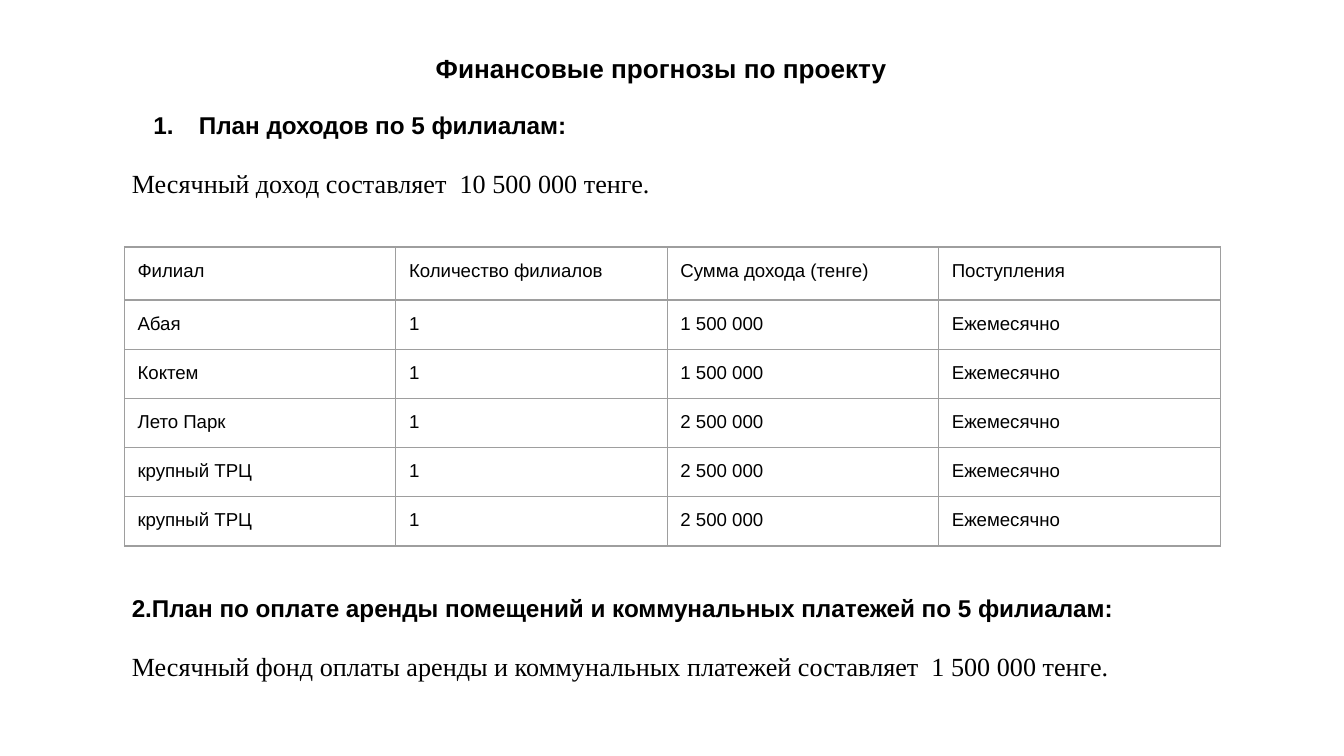
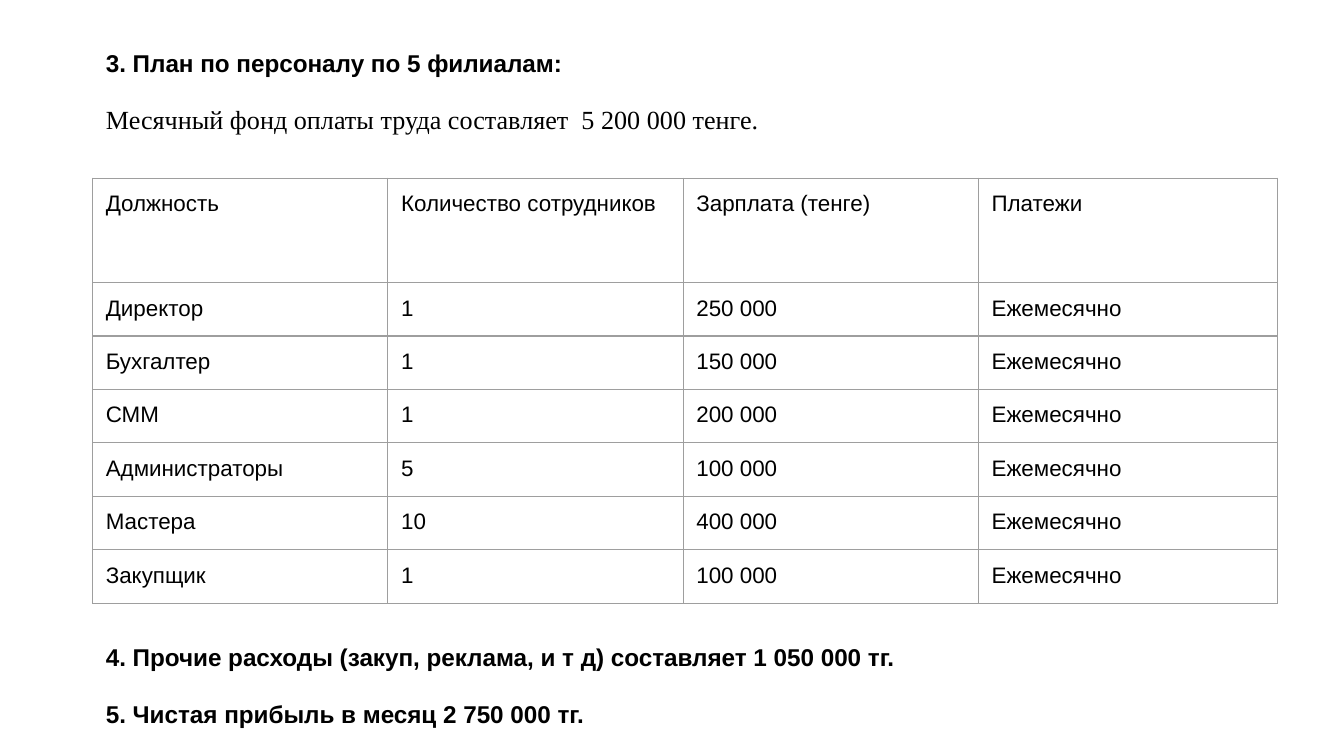
from pptx import Presentation
from pptx.dml.color import RGBColor
from pptx.enum.text import MSO_ANCHOR, MSO_AUTO_SIZE, PP_ALIGN
from pptx.oxml.ns import qn
from pptx.util import Cm, Pt
from lxml.etree import SubElement

# Shared look
BLACK, WHITE, GRID = "000000", "FFFFFF", "9E9E9E"
INSET = Cm(0.25)
PARAGRAPH_GAP = Pt(15)
TWO_CONTENT_LAYOUT = 3
# style: font, size, bold, alignment
STYLES = {
    "title": ("Arial", 14, True, PP_ALIGN.CENTER),
    "heading": ("Arial", 13, True, PP_ALIGN.LEFT),
    "numbered": ("Arial", 13, True, PP_ALIGN.LEFT),
    "statement": ("Times New Roman", 14, False, PP_ALIGN.JUSTIFY),
}

# Content: texts as (style, wording); places in cm as left, top, width, height
MONTHLY = "Ежемесячно"
PAGES = [
    {
        "texts": [
            ((2.24, 0.74, 20.52, 1.09), [("title", "Финансовые прогнозы по проекту")]),
            ((2.24, 1.83, 20.52, 2.84), [
                ("numbered", "План доходов по 5 филиалам:"),
                ("statement", "Месячный доход составляет  10 500 000 тенге."),
            ]),
            ((2.24, 10.97, 20.83, 2.24), [
                ("heading", "2.План по оплате аренды помещений и коммунальных платежей по 5 филиалам:"),
                ("statement", "Месячный фонд оплаты аренды и коммунальных платежей составляет  1 500 000 тенге."),
            ]),
        ],
        "table": {
            "corner": (2.35, 4.67), "columns": [5.13] * 3 + [5.33],
            "header_height": 1, "row_height": 0.93, "size": 10,
            "header": ("Филиал", "Количество филиалов", "Сумма дохода (тенге)", "Поступления"),
            "rows": [
                ("Абая", "1", "1 500 000"),
                ("Коктем", "1", "1 500 000"),
                ("Лето Парк", "1", "2 500 000"),
                ("крупный ТРЦ", "1", "2 500 000"),
                ("крупный ТРЦ", "1", "2 500 000"),
            ],
        },
    },
    {
        "texts": [
            ((1.75, 0.66, 21.51, 1.04), [("heading", "3. План по персоналу по 5 филиалам:")]),
            ((1.75, 1.7, 21.51, 1.2), [
                ("statement", "Месячный фонд оплаты труда составляет  5 200 000 тенге."),
            ]),
            ((1.75, 11.89, 22.38, 2.18), [
                ("heading", "4. Прочие расходы (закуп, реклама, и т д) составляет 1 050 000 тг."),
                ("heading", "5. Чистая прибыль в месяц 2 750 000 тг."),
            ]),
        ],
        "table": {
            "corner": (1.75, 3.37), "columns": [5.58] * 3 + [5.66],
            "header_height": 1.97, "row_height": 1.01, "size": 12,
            "header": ("Должность", "Количество сотрудников", "Зарплата (тенге)", "Платежи"),
            "rows": [
                ("Директор", "1", "250 000"),
                ("Бухгалтер", "1", "150 000"),
                ("СММ", "1", "200 000"),
                ("Администраторы", "5", "100 000"),
                ("Мастера", "10", "400 000"),
                ("Закупщик", "1", "100 000"),
            ],
        },
    },
]


def color(value):
    return RGBColor.from_string(value)


def format_font(paragraph, name, size, bold=False):
    for span in paragraph.runs:
        span.font.name = name
        span.font.size = Pt(size)
        span.font.bold = bold
        span.font.color.rgb = color(BLACK)


def set_margins(target):
    target.margin_left = target.margin_right = INSET
    target.margin_top = target.margin_bottom = INSET


def set_bullet(paragraph, numbered):
    properties = paragraph._p.get_or_add_pPr()
    properties.set("marL", str(Cm(1.27) if numbered else 0))
    properties.set("indent", str(Cm(-0.86) if numbered else 0))
    if numbered:
        SubElement(properties, qn("a:buFont"), typeface="Arial")
        SubElement(properties, qn("a:buAutoNum"), type="arabicPeriod")
    else:
        SubElement(properties, qn("a:buNone"))


def fill_placeholder(box, place, lines):
    box.left, box.top, box.width, box.height = map(Cm, place)
    frame = box.text_frame
    frame.text = "\n".join(wording for _, wording in lines)
    frame.word_wrap = True
    frame.auto_size = MSO_AUTO_SIZE.NONE
    frame.vertical_anchor = MSO_ANCHOR.TOP
    set_margins(frame)
    for number, (paragraph, (style, _)) in enumerate(zip(frame.paragraphs, lines)):
        name, size, bold, alignment = STYLES[style]
        paragraph.alignment = alignment
        paragraph.space_before = PARAGRAPH_GAP if number else Pt(0)
        set_bullet(paragraph, style == "numbered")
        format_font(paragraph, name, size, bold)


def set_borders(cell):
    properties = cell._tc.get_or_add_tcPr()
    for position, side in enumerate(("lnL", "lnR", "lnT", "lnB")):
        line = SubElement(properties, qn("a:" + side), w=str(Pt(0.75)))
        fill = SubElement(line, qn("a:solidFill"))
        SubElement(fill, qn("a:srgbClr"), val=GRID)
        properties.insert(position, line)


def add_grid(page, data):
    records = [data["header"]] + [row + (MONTHLY,) for row in data["rows"]]
    heights = [data["header_height"]] + [data["row_height"]] * len(data["rows"])
    left, top = data["corner"]
    grid = page.shapes.add_table(
        len(records), len(data["columns"]), Cm(left), Cm(top),
        Cm(sum(data["columns"])), Cm(sum(heights))).table
    grid.first_row = grid.horz_banding = False
    for column, width in zip(grid.columns, data["columns"]):
        column.width = Cm(width)
    for row, height, record in zip(grid.rows, heights, records):
        row.height = Cm(height)
        for cell, wording in zip(row.cells, record):
            cell.text_frame.text = wording
            set_margins(cell)
            cell.fill.background()
            set_borders(cell)
            format_font(cell.text_frame.paragraphs[0], "Arial", data["size"])


def main():
    deck = Presentation()
    deck.slide_width, deck.slide_height = Cm(25.4), Cm(14.29)
    background = deck.slide_master.background.fill
    background.solid()
    background.fore_color.rgb = color(WHITE)
    for content in PAGES:
        page = deck.slides.add_slide(deck.slide_layouts[TWO_CONTENT_LAYOUT])
        # Title, text above the table, text below it
        for box, (place, lines) in zip(page.placeholders, content["texts"]):
            fill_placeholder(box, place, lines)
        add_grid(page, content["table"])
    deck.save("out.pptx")


if __name__ == "__main__":
    main()
